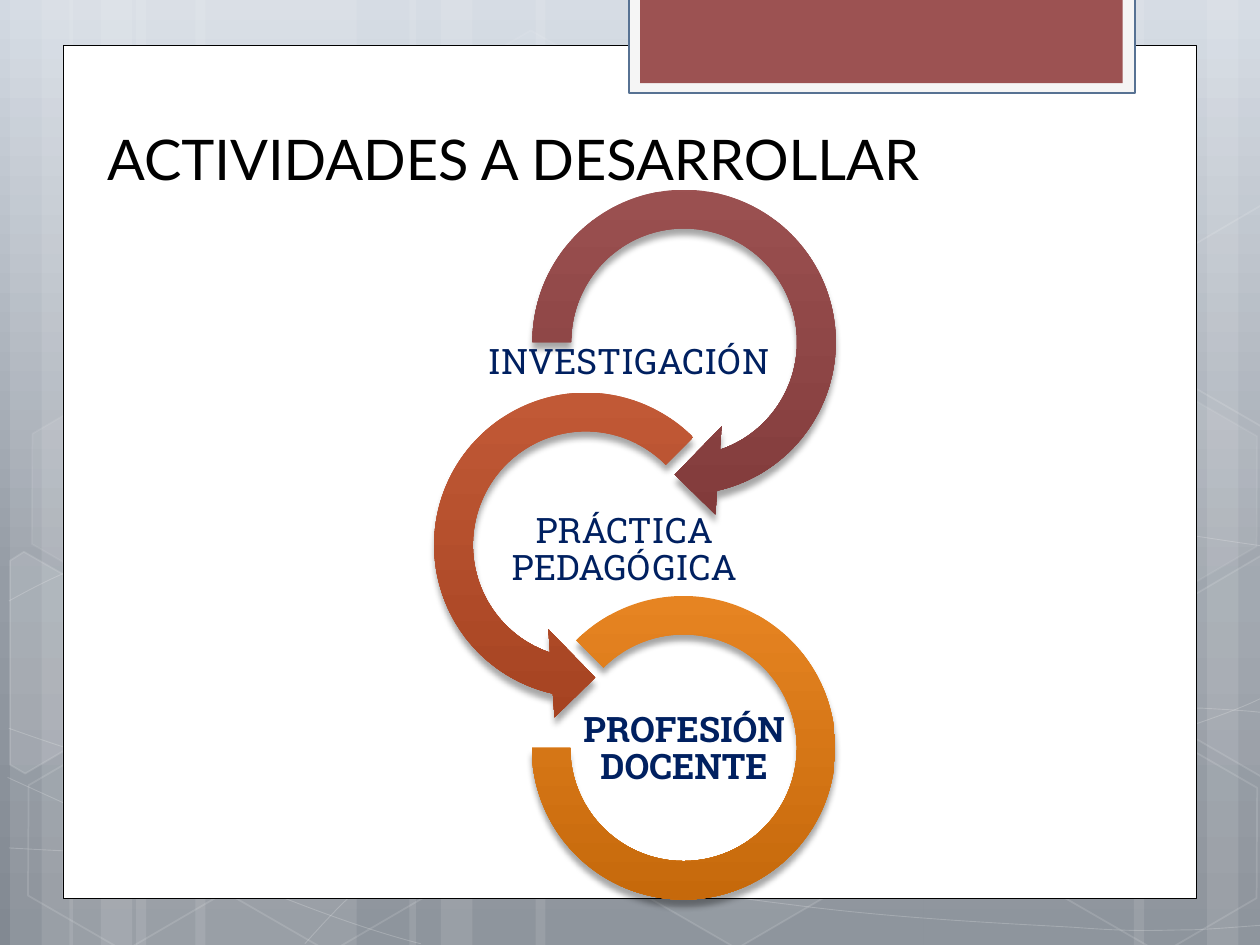
from collections import namedtuple
from dataclasses import dataclass

from lxml import etree
from pptx import Presentation
from pptx.dml.color import RGBColor
from pptx.enum import shapes, text
from pptx.oxml.ns import qn
from pptx.util import Inches, Pt

Box = namedtuple("Box", "x y w h")
G = shapes.MSO_SHAPE


@dataclass(frozen=True)
class Theme:
    """Colours, fonts and type sizes of the slide."""
    sky: tuple = ((0, "D2D9E2"), (62, "959CA5"), (100, "828992"))
    white: str = "FFFFFF"
    black: str = "000000"
    tab: str = "F5F5F5"
    tab_line: str = "577293"
    accent: str = "9C5252"
    label: str = "002060"
    red: tuple = ((0, "9C5252"), (100, "823B3B"))
    rust: tuple = ((0, "C35B38"), (100, "A64321"))
    orange: tuple = ((0, "E68422"), (100, "C6690B"))
    title_font: str = "Lato"
    label_font: str = "Roboto Slab"
    title_size: int = 32
    label_size: int = 20


T = Theme()

STRIPS = [(1.08, 1.75), (0.08, 0.5), (0.33, 0.83), (1.55, 1.75), (0.55, 0.5), (0.8, 0.83),
          (7.33, 1.75), (9.58, 0.5), (9, 0.83), (4.25, 3.08), (3.25, 0.5), (3.5, 0.83)]
CURVES = [
    ([(0.07, 6.73), (0.61, 6.76), (1.15, 6.79), (1.9, 6.78), (2.65, 6.77), (3.58, 6.75),
      (4.58, 6.65), (5.58, 6.55), (7, 6.36), (7.92, 6.17), (8.83, 5.98), (9.77, 5.68),
      (10.07, 5.51)], None),
    ([(0.07, 4.77), (0.36, 4.61), (0.65, 4.46), (1.21, 4.31), (1.78, 4.16), (2.59, 3.94),
      (3.47, 3.87), (4.36, 3.8), (5.44, 3.79), (6.54, 3.87), (7.64, 3.95), (9.47, 4.26),
      (10.07, 4.34)], None),
    ([(0.06, 6.17), (1.27, 6.72), (2.47, 7.27), (3.34, 7.49)], None),
    ([(0.07, 5.78), (0.38, 5.89), (0.7, 6), (1.28, 6.16), (1.86, 6.31), (2.73, 6.56),
      (3.57, 6.73), (4.4, 6.9), (5.45, 7.08), (6.28, 7.18), (7.11, 7.29), (8, 7.33),
      (8.53, 7.36), (9.05, 7.4), (9.19, 7.38), (9.45, 7.38), (9.71, 7.37), (9.89, 7.35),
      (10.07, 7.34)], None),
    ([(2.42, 7.49), (2.6, 7.29), (2.78, 7.09), (3.02, 6.91), (3.26, 6.73), (3.6, 6.53),
      (3.88, 6.39), (4.16, 6.25), (4.33, 6.19), (4.7, 6.09), (5.06, 5.99), (5.73, 5.85),
      (6.08, 5.78), (6.44, 5.71), (6.49, 5.71), (6.8, 5.69), (7.11, 5.66), (7.6, 5.63),
      (7.94, 5.62), (8.29, 5.61), (8.86, 5.62), (8.86, 5.62), (9.53, 5.62), (9.71, 5.63),
      (9.88, 5.64), (9.97, 5.65), (10.06, 5.66), (10.03, 5.65), (10.06, 5.66)], 21),
]
HEXAGONS = [(3.34, 0.36, 4, 8), (4.97, 5.89, 6, 12), (0.11, 5.91, 0, 12), (0.14, 3.12, 7, 8),
            (1.74, 5.92, 0, 12), (7.53, 4.53, 10, 12), (8.34, 5.93, 0, 12), (8.34, 3.14, 7, 8)]
CUT_HEXAGONS = [
    ([(0.08, 4.45), (0.19, 4.38), (0.96, 4.82), (0.95, 5.7), (0.2, 6.14), (0.08, 6.07)], 10),
    ([(9.26, 4.85), (10.01, 4.41), (10.09, 4.46), (10.09, 6.13), (10.02, 6.17), (9.26, 5.73)], 4),
    ([(9.26, 2.07), (10.01, 1.63), (10.1, 1.68), (10.09, 3.35), (10.02, 3.39), (9.26, 2.95)], 0),
]


def set_alpha(fill_parent, percent):
    """Make the solid fill under an element partly transparent."""
    if percent < 100:
        clr = fill_parent.find(qn("a:solidFill")).find(qn("a:srgbClr"))
        etree.SubElement(clr, qn("a:alpha"), val=str(percent * 1000))


def set_gradient(fill, element, stops):
    """Give a fill a top-to-bottom gradient with the given stops."""
    fill.gradient()
    fill.gradient_angle = 270
    gs_list = next(element.iter(qn("a:gsLst")))
    for gs in list(gs_list):
        gs_list.remove(gs)
    for pos, color in stops:
        gs = etree.SubElement(gs_list, qn("a:gs"), pos=str(pos * 1000))
        etree.SubElement(gs, qn("a:srgbClr"), val=color)


def style(sp, fill=None, alpha=100, line=None, width=1, line_alpha=100):
    """Set the fill, outline and transparency of a shape."""
    sp.shadow.inherit = False
    if fill:
        sp.fill.solid()
        sp.fill.fore_color.rgb = RGBColor.from_string(fill)
        set_alpha(sp._element.spPr, alpha)
    else:
        sp.fill.background()
    if line:
        sp.line.color.rgb = RGBColor.from_string(line)
        sp.line.width = Pt(width)
        set_alpha(sp._element.spPr.find(qn("a:ln")), line_alpha)
    else:
        sp.line.fill.background()


def add_shape(s, kind, x, y, w, h, adj=(), **look):
    """Add a styled preset shape."""
    sp = s.shapes.add_shape(kind, Inches(x), Inches(y), Inches(w), Inches(h))
    for i, value in enumerate(adj):
        sp.adjustments[i] = value
    style(sp, **look)
    return sp


def add_outline(s, box, points, close, **look):
    """Add a styled freeform through points of a box."""
    pts = [(Inches(box.x + x), Inches(box.y + y)) for x, y in points]
    fb = s.shapes.build_freeform(*pts[0])
    fb.add_line_segments(pts[1:], close=close)
    sp = fb.convert_to_shape()
    style(sp, **look)
    return sp


def bend(sp, straight):
    """Join line segments by threes into cubic curves, except one straight segment."""
    segments = list(sp._element.iter(qn("a:lnTo")))
    if straight is not None:
        del segments[straight]
    for i in range(0, len(segments), 3):
        cubic = etree.Element(qn("a:cubicBezTo"))
        segments[i].addprevious(cubic)
        for seg in segments[i:i + 3]:
            cubic.append(seg[0])
            seg.getparent().remove(seg)


def write(tf, content, *, font, size, color, bold=False, align=None, anchor=None, spacing=None):
    """Write one formatted paragraph into a text frame."""
    tf.word_wrap = True
    tf.auto_size = text.MSO_AUTO_SIZE.NONE
    tf.vertical_anchor = anchor
    p = tf.paragraphs[0]
    p.alignment, p.line_spacing = align, spacing
    r = p.add_run()
    r.text = content
    r.font.name, r.font.size, r.font.bold = font, Pt(size), bold
    r.font.color.rgb = RGBColor.from_string(color)


def add_backdrop(s, box):
    """Draw the gradient, light strips, curves and hexagons."""
    set_gradient(s.background.fill, s._element, T.sky)
    for x, w in STRIPS:
        add_shape(s, G.RECTANGLE, box.x + x, box.y, w, box.h, fill=T.white, alpha=10)
    for points, straight in CURVES:
        bend(add_outline(s, box, points, False, line=T.white, width=0.5, line_alpha=20), straight)
    for x, y, alpha, line_alpha in HEXAGONS:
        sp = add_shape(s, G.HEXAGON, box.x + x, box.y + y, 1.75, 1.52, adj=(0.285, 1.155),
                       fill=T.white if alpha else None, alpha=alpha,
                       line=T.white, line_alpha=line_alpha)
        sp.rotation = 30
    for points, alpha in CUT_HEXAGONS:
        add_outline(s, box, points, True, fill=T.white if alpha else None, alpha=alpha,
                    line=T.white, line_alpha=12)


def add_panel(s, box):
    """Draw the white panel with its coloured tab and title."""
    add_shape(s, G.RECTANGLE, *box, fill=T.white, line=T.black, width=0.5)
    x, y = box.x + 4.49, box.y - 0.38
    add_shape(s, G.RECTANGLE, x, y, 4.02, 0.76, fill=T.tab, line=T.tab_line, width=1.25)
    add_shape(s, G.RECTANGLE, x + 0.09, y, 3.83, 0.68, fill=T.accent)
    title = s.shapes.title
    title.left, title.top = Inches(box.x + 0.25), Inches(box.y + 0.47)
    title.width, title.height = Inches(box.w - 0.5), Inches(0.74)
    s.shapes._spTree.append(title._element)
    write(title.text_frame, "ACTIVIDADES A DESARROLLAR", font=T.title_font, size=T.title_size,
          color=T.black, align=text.PP_ALIGN.LEFT, anchor=text.MSO_ANCHOR.BOTTOM)


def add_step(s, kind, box, adj, stops, label, label_box, bold=False):
    """Draw one ring of the cycle and its label."""
    sp = add_shape(s, kind, *box, adj=adj)
    set_gradient(sp.fill, sp._element, stops)
    effects = sp._element.spPr.find(qn("a:effectLst"))
    shadow = etree.SubElement(effects, qn("a:outerShdw"), blurRad=str(Pt(3.5)), dist=str(Pt(4)),
                              dir="5400000", rotWithShape="0")
    clr = etree.SubElement(shadow, qn("a:srgbClr"), val=T.black)
    etree.SubElement(clr, qn("a:alpha"), val="34000")
    tf = s.shapes.add_textbox(*map(Inches, label_box)).text_frame
    tf.margin_left = tf.margin_right = tf.margin_top = tf.margin_bottom = Inches(0.01)
    write(tf, label, font=T.label_font, size=T.label_size, color=T.label, bold=bold,
          align=text.PP_ALIGN.CENTER, anchor=text.MSO_ANCHOR.MIDDLE, spacing=0.9)


def add_cycle(s, box):
    """Draw the three linked rings from top to bottom."""
    x, y = box.x, box.y
    add_step(s, G.CIRCULAR_ARROW, Box(x + 0.78, y, 2.8, 2.81), (0.11, 11.423, 45, 108, 0.125),
             T.red, "INVESTIGACIÓN", Box(x + 0.25, y + 1.18, 2.98, 0.78))
    add_step(s, G.LEFT_CIRCULAR_ARROW, Box(x, y + 1.61, 2.8, 2.81),
             (0.11, 11.423, 63, 189, 0.125),
             T.rust, "PRÁCTICA PEDAGÓGICA", Box(x + 0.53, y + 2.67, 2.35, 0.78))
    add_step(s, G.BLOCK_ARC, Box(x + 0.97, y + 3.42, 2.41, 2.41), (135, 108, 0.127),
             T.orange, "PROFESIÓN DOCENTE", Box(x + 1.16, y + 4.25, 2.04, 0.78), bold=True)


def main():
    """Build and save the slide."""
    prs = Presentation()
    prs.slide_width, prs.slide_height = Inches(10), Inches(7.5)
    s = prs.slides.add_slide(prs.slide_layouts[5])
    add_backdrop(s, Box(0, 0, 10, 7.5))
    add_panel(s, Box(0.5, 0.36, 9, 6.77))
    add_cycle(s, Box(3.25, 1.31, 3.57, 5.83))
    prs.save("out.pptx")


if __name__ == "__main__":
    main()
